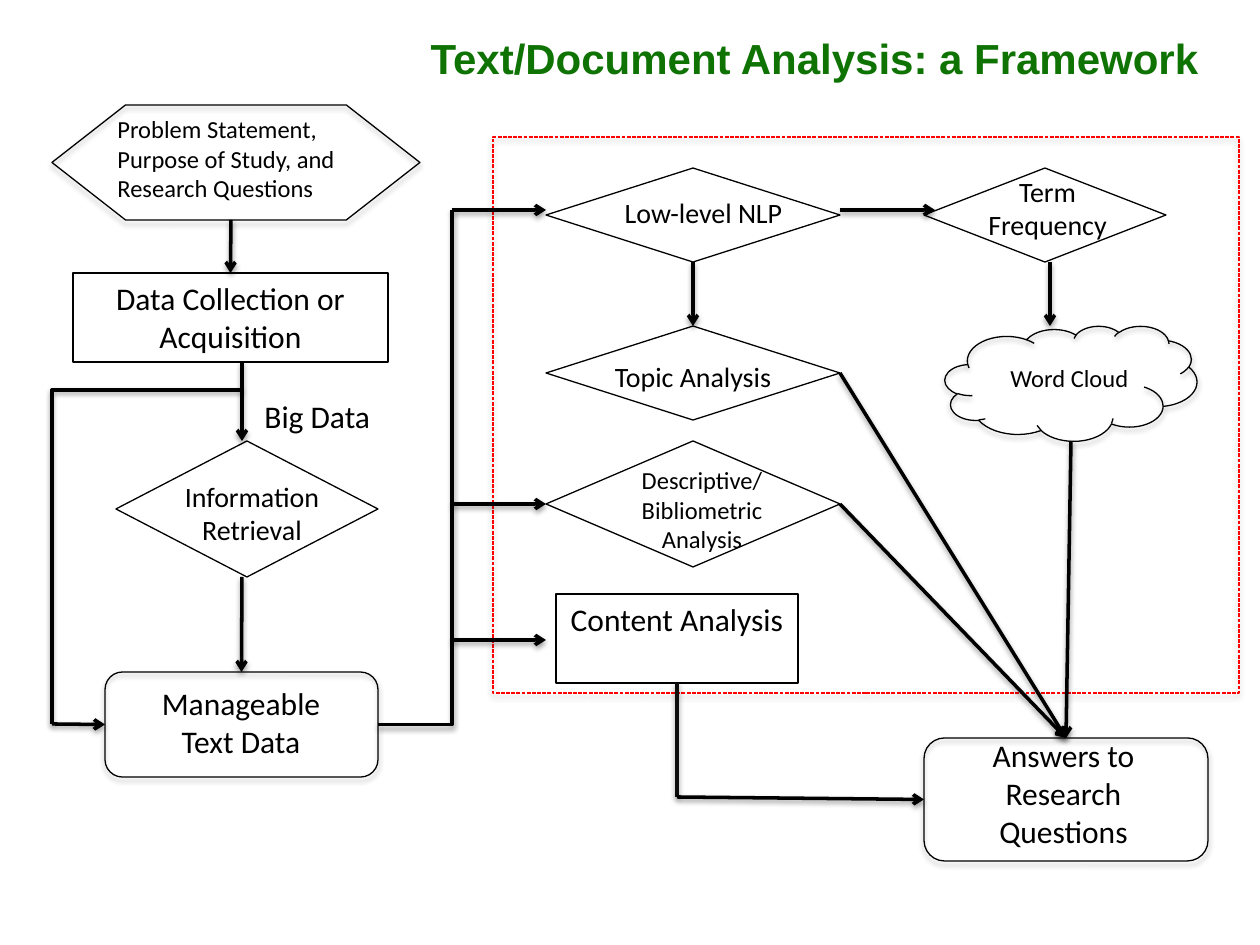
from dataclasses import dataclass
from typing import NamedTuple

import pptx
import pptx.dml.color
import pptx.enum.dml
import pptx.enum.shapes
import pptx.enum.text
import pptx.oxml
import pptx.oxml.ns
import pptx.util

EMU_PER_PX = 914400 / 126
BLACK = pptx.dml.color.RGBColor(0x00, 0x00, 0x00)
NEAR_BLACK = pptx.dml.color.RGBColor(0x0D, 0x0D, 0x0D)
RED = pptx.dml.color.RGBColor(0xFF, 0x00, 0x00)
GREEN = pptx.dml.color.RGBColor(0x0F, 0x73, 0x04)

KIND = pptx.enum.shapes.MSO_SHAPE
CONNECTOR = pptx.enum.shapes.MSO_CONNECTOR
ALIGN = pptx.enum.text.PP_ALIGN
ANCHOR = pptx.enum.text.MSO_ANCHOR
TOP, LEFT, BOTTOM, RIGHT = range(4)


class Box(NamedTuple):
    x: int
    y: int
    w: int
    h: int


class Point(NamedTuple):
    x: int
    y: int


class Site(NamedTuple):
    """The middle of one side of a named node."""
    node: str
    side: int


@dataclass
class Node:
    name: str
    kind: KIND
    box: Box
    shadow: bool = False
    text: str = ""
    color: pptx.dml.color.RGBColor = BLACK


@dataclass
class Label:
    text: str
    box: Box
    size: int
    align: ALIGN = ALIGN.CENTER


@dataclass
class Link:
    start: Point | Site
    end: Point | Site
    arrow: bool = True
    bent: bool = False
    color: pptx.dml.color.RGBColor = BLACK


NODES = [
    Node("problem", KIND.FLOWCHART_PREPARATION, Box(52, 105, 368, 115), True),
    Node("collection", KIND.RECTANGLE, Box(73, 273, 315, 89),
         text="Data Collection or Acquisition"),
    Node("retrieval", KIND.FLOWCHART_DECISION, Box(116, 441, 262, 136)),
    Node("manageable", KIND.ROUNDED_RECTANGLE, Box(105, 672, 273, 105), True),
    Node("nlp", KIND.FLOWCHART_DECISION, Box(546, 168, 294, 94)),
    Node("topic", KIND.FLOWCHART_DECISION, Box(546, 326, 294, 94)),
    Node("descriptive", KIND.FLOWCHART_DECISION, Box(546, 441, 294, 126)),
    Node("content", KIND.RECTANGLE, Box(556, 594, 242, 89), text="Content Analysis"),
    Node("frequency", KIND.FLOWCHART_DECISION, Box(924, 168, 242, 94)),
    Node("cloud", KIND.CLOUD, Box(945, 326, 252, 115), True),
    Node("answers", KIND.ROUNDED_RECTANGLE, Box(924, 738, 284, 123), True),
    Node("analysis", KIND.RECTANGLE, Box(493, 137, 746, 556), True, color=RED),
]

LABELS = [
    Label("Problem Statement, Purpose of Study, and Research Questions",
          Box(105, 108, 273, 102), 14, ALIGN.LEFT),
    Label("Big Data", Box(252, 391, 168, 50), 18, ALIGN.LEFT),
    Label("Information Retrieval", Box(147, 473, 210, 81), 16),
    Label("Manageable Text Data", Box(136, 678, 210, 89), 18),
    Label("Low-level NLP", Box(567, 189, 273, 47), 16),
    Label("Topic Analysis", Box(588, 353, 210, 47), 16),
    Label("Descriptive/Bibliometric Analysis", Box(597, 459, 210, 72), 14),
    Label("Term Frequency", Box(949, 168, 197, 81), 16),
    Label("Word Cloud", Box(998, 357, 168, 43), 14, ALIGN.LEFT),
    Label("Answers to Research Questions", Box(927, 730, 273, 127), 18),
]

LINKS = [
    Link(Point(231, 220), Site("collection", TOP)),
    Link(Point(242, 362), Point(242, 441)),
    Link(Point(242, 390), Point(52, 724), arrow=False, bent=True),
    Link(Point(52, 724), Site("manageable", LEFT)),
    Link(Point(242, 577), Site("manageable", TOP)),
    Link(Site("manageable", RIGHT), Point(452, 210), arrow=False, bent=True),
    Link(Point(452, 210), Point(546, 210)),
    Link(Point(452, 504), Site("descriptive", LEFT)),
    Link(Point(452, 640), Point(546, 640)),
    Link(Site("nlp", BOTTOM), Site("topic", TOP)),
    Link(Point(840, 210), Point(935, 210)),
    Link(Point(1050, 262), Point(1050, 326)),
    Link(Point(1071, 441), Site("answers", TOP)),
    Link(Site("topic", RIGHT), Site("answers", TOP)),
    Link(Site("descriptive", RIGHT), Site("answers", TOP)),
    Link(Site("content", BOTTOM), Point(677, 797), arrow=False, color=NEAR_BLACK),
    Link(Point(677, 797), Site("answers", LEFT)),
]


def px(*lengths: int) -> list[int]:
    return [round(length * EMU_PER_PX) for length in lengths]


def add_xml(parent, tag: str, **attributes):
    element = parent.makeelement(pptx.oxml.ns.qn(tag), attributes)
    parent.append(element)
    return element


def set_shadow(properties, distance_pt: float, opacity: int) -> None:
    """Give shape properties a soft black shadow that falls straight down."""
    effects = properties.find(pptx.oxml.ns.qn("a:effectLst"))
    if effects is None:
        effects = add_xml(properties, "a:effectLst")
    outer = add_xml(effects, "a:outerShdw", blurRad=str(pptx.util.Pt(3.1)),
                    dist=str(pptx.util.Pt(distance_pt)), dir="5400000", rotWithShape="0")
    color = add_xml(outer, "a:srgbClr", val=str(BLACK))
    add_xml(color, "a:alpha", val=str(opacity * 1000))


def write(frame, text: str, *, size: int, font="Calibri", color=BLACK, bold=False,
          align=ALIGN.CENTER, anchor=ANCHOR.TOP, grow=True) -> None:
    frame.word_wrap = True
    frame.vertical_anchor = anchor
    if grow:
        frame.auto_size = pptx.enum.text.MSO_AUTO_SIZE.SHAPE_TO_FIT_TEXT
    paragraph = frame.paragraphs[0]
    paragraph.alignment = align
    run = paragraph.add_run()
    run.text = text
    run.font.name = font
    run.font.size = pptx.util.Pt(size)
    run.font.bold = bold
    run.font.color.rgb = color


def draw_node(slide, node: Node):
    shape = slide.shapes.add_shape(node.kind, *px(*node.box))
    shape.fill.background()
    shape.line.color.rgb = node.color
    shape.line.width = pptx.util.Pt(0.75)
    if node.color == RED:
        shape.line.dash_style = pptx.enum.dml.MSO_LINE.SQUARE_DOT
    shape.shadow.inherit = False
    if node.shadow:
        set_shadow(shape.element.spPr, 1.8, 35)
    if node.text:
        write(shape.text_frame, node.text, size=18)
    return shape


def draw_label(slide, label: Label) -> None:
    box = slide.shapes.add_textbox(*px(*label.box))
    write(box.text_frame, label.text, size=label.size, align=label.align)


def locate(end: Point | Site, boxes: dict[str, Box]) -> Point:
    if isinstance(end, Point):
        return end
    x, y, w, h = boxes[end.node]
    return {TOP: Point(x + w // 2, y), LEFT: Point(x, y + h // 2),
            BOTTOM: Point(x + w // 2, y + h), RIGHT: Point(x + w, y + h // 2)}[end.side]


def draw_link(slide, link: Link, shapes: dict, boxes: dict[str, Box]) -> None:
    kind = CONNECTOR.ELBOW if link.bent else CONNECTOR.STRAIGHT
    connector = slide.shapes.add_connector(
        kind, *px(*locate(link.start, boxes), *locate(link.end, boxes)))
    if isinstance(link.start, Site):
        connector.begin_connect(shapes[link.start.node], link.start.side)
    if isinstance(link.end, Site):
        connector.end_connect(shapes[link.end.node], link.end.side)
    properties = connector.element.spPr
    if link.bent:
        properties.find(pptx.oxml.ns.qn("a:prstGeom")).set("prst", "bentConnector2")
    connector.line.color.rgb = link.color
    connector.line.width = pptx.util.Pt(2)
    if link.arrow:
        add_xml(connector.line._get_or_add_ln(), "a:tailEnd", type="arrow")
    set_shadow(properties, 1.6, 38)


def main() -> None:
    presentation = pptx.Presentation()
    presentation.slide_width, presentation.slide_height = px(1260, 945)
    slide = presentation.slides.add_slide(presentation.slide_layouts[5])

    title = slide.shapes.title
    title.left, title.top, title.width, title.height = px(410, 21, 809, 73)
    write(title.text_frame, "Text/Document Analysis: a Framework", size=24, font="Arial",
          color=GREEN, bold=True, anchor=ANCHOR.MIDDLE, grow=False)

    shapes = {node.name: draw_node(slide, node) for node in NODES}
    boxes = {node.name: node.box for node in NODES}
    for label in LABELS:
        draw_label(slide, label)
    for link in LINKS:
        draw_link(slide, link, shapes, boxes)
    presentation.save("out.pptx")


if __name__ == "__main__":
    main()
